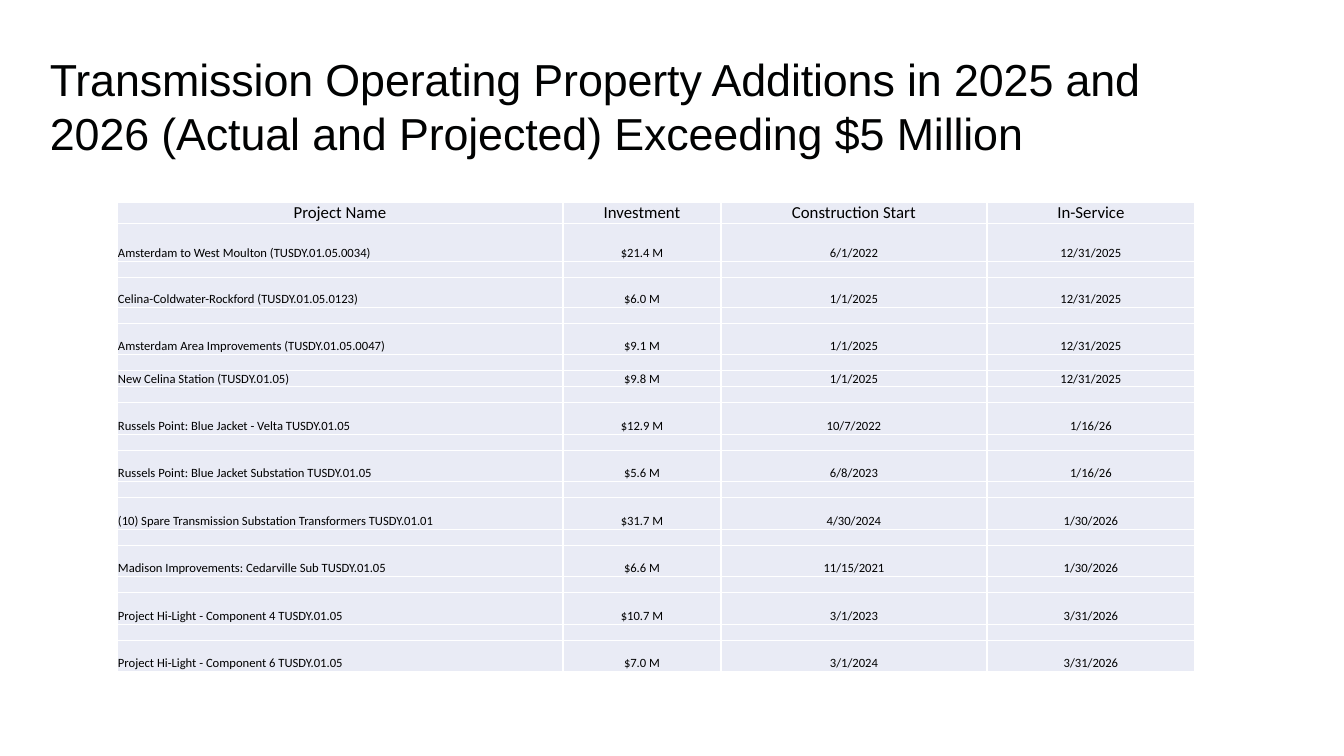
from dataclasses import dataclass

from lxml import etree
from pptx import Presentation
from pptx import util as u
from pptx.dml.color import RGBColor
from pptx.enum import text
from pptx.oxml.ns import qn

EMU_PER_PX = 914400 / 100.8
TITLE = ("Transmission Operating Property Additions in 2025 and 2026 "
         "(Actual and Projected) Exceeding $5 Million")
HEADINGS = ("Project Name", "Investment", "Construction Start", "In-Service")
COLUMN_WIDTHS = (446, 158, 266, 208)
HEADER_HEIGHT = 21
GAP_HEIGHT = 16
CELL_FILL = "E9EBF5"
BORDER = "FFFFFF"


@dataclass(frozen=True)
class Project:
    name: str
    investment: str
    start: str
    in_service: str
    height: int


PROJECTS = (
    Project("Amsterdam to West Moulton (TUSDY.01.05.0034)", "$21.4 M", "6/1/2022", "12/31/2025", 38),
    Project("Celina-Coldwater-Rockford (TUSDY.01.05.0123)", "$6.0 M", "1/1/2025", "12/31/2025", 30),
    Project("Amsterdam Area Improvements (TUSDY.01.05.0047)", "$9.1 M", "1/1/2025", "12/31/2025", 31),
    Project("New Celina Station (TUSDY.01.05)", "$9.8 M", "1/1/2025", "12/31/2025", 16),
    Project("Russels Point: Blue Jacket - Velta TUSDY.01.05", "$12.9 M", "10/7/2022", "1/16/26", 32),
    Project("Russels Point: Blue Jacket Substation TUSDY.01.05", "$5.6 M", "6/8/2023", "1/16/26", 31),
    Project("(10) Spare Transmission Substation Transformers TUSDY.01.01", "$31.7 M", "4/30/2024", "1/30/2026", 32),
    Project("Madison Improvements: Cedarville Sub TUSDY.01.05", "$6.6 M", "11/15/2021", "1/30/2026", 31),
    Project("Project Hi-Light - Component 4 TUSDY.01.05", "$10.7 M", "3/1/2023", "3/31/2026", 32),
    Project("Project Hi-Light - Component 6 TUSDY.01.05", "$7.0 M", "3/1/2024", "3/31/2026", 31),
)


@dataclass(frozen=True)
class Row:
    values: tuple[str, ...]
    height: int
    size: int = 9
    name_align: text.PP_ALIGN = text.PP_ALIGN.LEFT


def px(length: int) -> u.Emu:
    return u.Emu(round(length * EMU_PER_PX))


def color(value: str) -> RGBColor:
    return RGBColor.from_string(value)


def apply(target, formats: dict) -> None:
    for name, value in formats.items():
        setattr(target, name, value)


def write(paragraph, content: str, font: str, size: int, hue: str) -> None:
    run = paragraph.add_run()
    run.text = content
    apply(run.font, {"name": font, "size": u.Pt(size), "bold": False})
    run.font.color.rgb = color(hue)


def add_title(slide) -> None:
    frame = slide.shapes.add_textbox(px(40), px(46), px(1156), px(119)).text_frame
    apply(frame, {"word_wrap": True, "vertical_anchor": text.MSO_ANCHOR.MIDDLE})
    paragraph = frame.paragraphs[0]
    write(paragraph, TITLE, "Arial", 32, "010202")
    paragraph.runs[0].font._element.set("spc", "-10")


def add_borders(cell) -> None:
    properties = cell._tc.get_or_add_tcPr()
    for side in ("lnL", "lnR", "lnT", "lnB"):
        line = etree.SubElement(properties, qn(f"a:{side}"), w=str(u.Pt(1)))
        fill = etree.SubElement(line, qn("a:solidFill"))
        etree.SubElement(fill, qn("a:srgbClr"), val=BORDER)


def format_cell(cell, content: str, size: int, align: text.PP_ALIGN) -> None:
    apply(cell, {"margin_left": px(1), "margin_right": px(1),
                 "margin_top": px(1) if content else 0, "margin_bottom": 0,
                 "vertical_anchor": text.MSO_ANCHOR.BOTTOM})
    add_borders(cell)
    cell.fill.solid()
    cell.fill.fore_color.rgb = color(CELL_FILL)
    paragraph = cell.text_frame.paragraphs[0]
    if content:
        paragraph.alignment = align
        write(paragraph, content, "Calibri", size, "000000")
    else:
        end = etree.SubElement(paragraph._p, qn("a:endParaRPr"), sz=str(size * 100))
        etree.SubElement(end, qn("a:latin"), typeface="Calibri")


def table_rows() -> list[Row]:
    """Header, then the projects with an empty row between each two."""
    gap = Row(("",) * len(HEADINGS), GAP_HEIGHT)
    rows = [Row(HEADINGS, HEADER_HEIGHT, 12, text.PP_ALIGN.CENTER)]
    for project in PROJECTS:
        values = (project.name, project.investment, project.start, project.in_service)
        rows += [Row(values, project.height), gap]
    return rows[:-1]


def add_project_table(slide) -> None:
    rows = table_rows()
    table = slide.shapes.add_table(
        len(rows), len(HEADINGS), px(117), px(202),
        px(sum(COLUMN_WIDTHS)), px(sum(row.height for row in rows))).table
    apply(table, {"first_row": False, "horz_banding": False})
    for column, width in zip(table.columns, COLUMN_WIDTHS):
        column.width = px(width)
    for table_row, row in zip(table.rows, rows):
        table_row.height = px(row.height)
        for index, (cell, content) in enumerate(zip(table_row.cells, row.values)):
            align = text.PP_ALIGN.CENTER if index else row.name_align
            format_cell(cell, content, row.size, align)


def main() -> None:
    presentation = Presentation()
    apply(presentation, {"slide_width": px(1344), "slide_height": px(756)})
    slide = presentation.slides.add_slide(presentation.slide_layouts[6])
    add_title(slide)
    add_project_table(slide)
    presentation.save("out.pptx")


if __name__ == "__main__":
    main()
